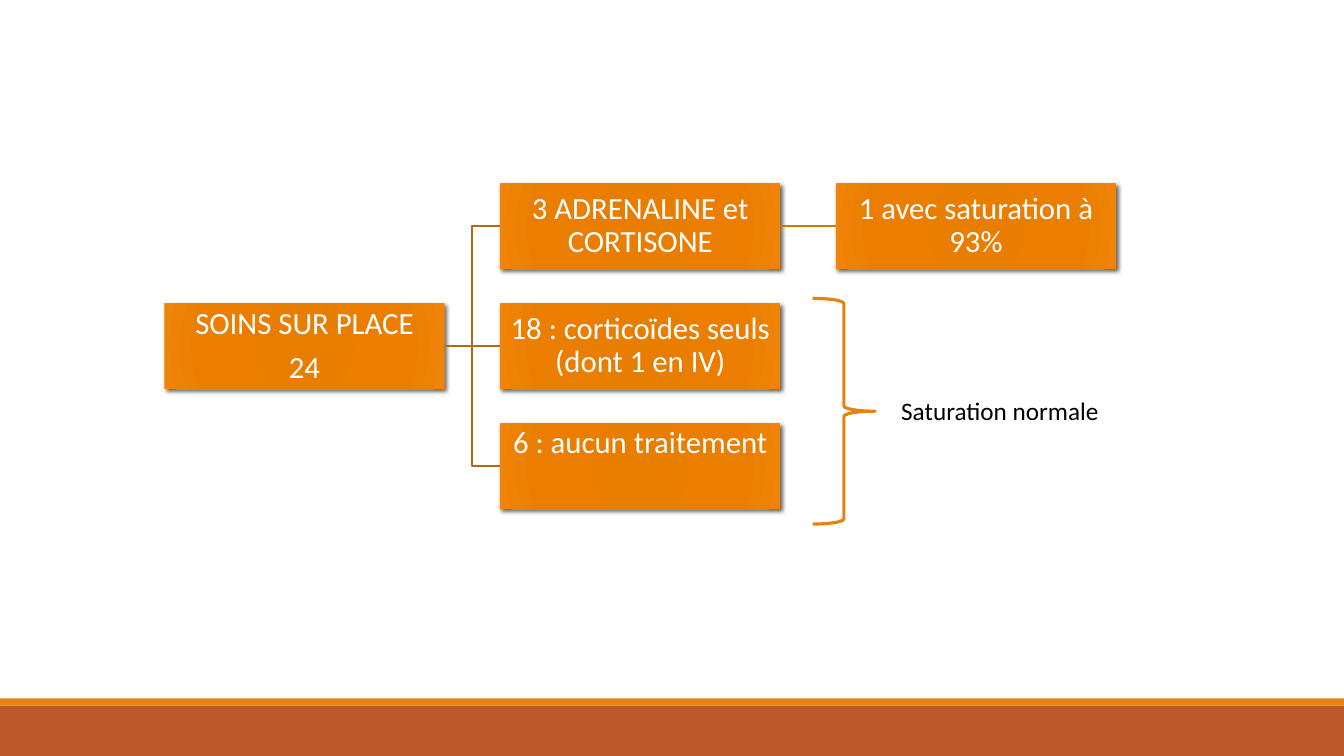
from dataclasses import dataclass

from pptx import Presentation
from pptx import oxml
from pptx.dml.color import RGBColor
from pptx.enum import shapes, text
from pptx.oxml import ns
from pptx.util import Inches, Pt

ORANGE = RGBColor(0xE4, 0x83, 0x12)
RUST = RGBColor(0xBD, 0x58, 0x2C)
BRANCH = RGBColor(0xB7, 0x69, 0x0E)
TWIG = RGBColor(0xCF, 0x77, 0x10)
WHITE = RGBColor(0xFF, 0xFF, 0xFF)
BLACK = RGBColor(0, 0, 0)
FONT = "Calibri"

SLIDE_WIDTH, SLIDE_HEIGHT = 13.33, 7.5
BOX_WIDTH, BOX_HEIGHT = 2.78, 0.85
LEFT, TOP = 1.63, 1.82
COLUMN_STEP, ROW_STEP = 3.33, 1.19
INSET = 0.02

GRADIENT_STOPS = ((0, "E57B00"), (34, "E87D00"), (70, "EB7E00"), (100, "EF8407"))
GRADIENT = (
    f'<a:gradFill {ns.nsdecls("a")} rotWithShape="1"><a:gsLst>'
    + "".join(
        f'<a:gs pos="{stop * 1000}"><a:srgbClr val="{colour}"/></a:gs>'
        for stop, colour in GRADIENT_STOPS
    )
    + '</a:gsLst><a:path path="circle">'
    '<a:fillToRect l="100000" t="100000" r="100000" b="100000"/>'
    "</a:path></a:gradFill>"
)
SHADOW = (
    f'<a:outerShdw {ns.nsdecls("a")} blurRad="{Pt(3)}" dist="{Pt(2)}" '
    'dir="2700000" algn="ctr" rotWithShape="0">'
    '<a:srgbClr val="000000"><a:alpha val="60000"/></a:srgbClr></a:outerShdw>'
)


@dataclass(frozen=True)
class Node:
    key: str
    column: int
    row: int
    lines: tuple[str, ...]
    bottom_inset: float = INSET


@dataclass(frozen=True)
class Link:
    start: str
    end: str
    colour: RGBColor = BRANCH


@dataclass(frozen=True)
class Bar:
    top: float
    height: float
    colour: RGBColor


NODES = (
    Node("care", 0, 1, ("SOINS SUR PLACE", "24")),
    Node("adrenaline", 1, 0, ("3 ADRENALINE et CORTISONE",)),
    Node("saturation", 2, 0, ("1 avec saturation à 93%",)),
    Node("steroids", 1, 1, ("18 : corticoïdes seuls (dont 1 en IV)",)),
    Node("untreated", 1, 2, ("6 : aucun traitement",), bottom_inset=0.46),
)
LINKS = (
    Link("care", "untreated"),
    Link("care", "steroids"),
    Link("adrenaline", "saturation", TWIG),
    Link("care", "adrenaline"),
)
BARS = (Bar(7, 0.5, RUST), Bar(6.93, 0.07, ORANGE))


def add_span(para, words: str, size: float, colour: RGBColor) -> None:
    span = para.add_run()
    span.text = words
    span.font.name = FONT
    span.font.size = Pt(size)
    span.font.color.rgb = colour


def add_bar(page, bar: Bar) -> None:
    band = page.shapes.add_shape(
        shapes.MSO_SHAPE.RECTANGLE,
        0, Inches(bar.top), Inches(SLIDE_WIDTH), Inches(bar.height),
    )
    band.shadow.inherit = False
    band.fill.solid()
    band.fill.fore_color.rgb = bar.colour
    band.line.fill.background()


def style_box(box) -> None:
    """Give the box its radial gradient and soft shadow."""
    box.fill.background()
    box.line.fill.background()
    box.shadow.inherit = False
    properties = box.element.spPr
    properties.replace(properties.find(ns.qn("a:noFill")), oxml.parse_xml(GRADIENT))
    properties.find(ns.qn("a:effectLst")).append(oxml.parse_xml(SHADOW))


def add_node(page, node: Node):
    box = page.shapes.add_shape(
        shapes.MSO_SHAPE.RECTANGLE,
        Inches(LEFT + node.column * COLUMN_STEP),
        Inches(TOP + node.row * ROW_STEP),
        Inches(BOX_WIDTH), Inches(BOX_HEIGHT),
    )
    style_box(box)
    frame = box.text_frame
    frame.word_wrap = True
    frame.vertical_anchor = text.MSO_ANCHOR.MIDDLE
    frame.margin_left = frame.margin_right = frame.margin_top = Inches(INSET)
    frame.margin_bottom = Inches(node.bottom_inset)
    for index, line in enumerate(node.lines):
        para = frame.add_paragraph() if index else frame.paragraphs[0]
        para.alignment = text.PP_ALIGN.CENTER
        para.line_spacing = 0.9
        para.space_after = Pt(7.7)
        add_span(para, line, 22, WHITE)
    return box


def add_link(page, link: Link, boxes: dict) -> None:
    start, end = boxes[link.start], boxes[link.end]
    kind = shapes.MSO_CONNECTOR.STRAIGHT if start.top == end.top else shapes.MSO_CONNECTOR.ELBOW
    connector = page.shapes.add_connector(kind, 0, 0, 0, 0)
    connector.begin_connect(start, 3)
    connector.end_connect(end, 1)
    connector.line.color.rgb = link.colour
    connector.line.width = Pt(1.25)
    connector.element.spPr.append(oxml.parse_xml(f'<a:effectLst {ns.nsdecls("a")}/>'))


def add_brace(page) -> None:
    brace = page.shapes.add_shape(
        shapes.MSO_SHAPE.RIGHT_BRACE,
        Inches(8.06), Inches(2.96), Inches(0.62), Inches(2.24),
    )
    brace.shadow.inherit = False
    brace.fill.background()
    brace.line.color.rgb = ORANGE
    brace.line.width = Pt(2.25)


def add_brace_label(page) -> None:
    label = page.shapes.add_textbox(Inches(8.84), Inches(3.87), Inches(2.9), Inches(0.4))
    label.text_frame.word_wrap = True
    add_span(label.text_frame.paragraphs[0], "Saturation normale", 18, BLACK)


def main() -> None:
    deck = Presentation()
    deck.slide_width, deck.slide_height = Inches(SLIDE_WIDTH), Inches(SLIDE_HEIGHT)
    page = deck.slides.add_slide(deck.slide_layouts.get_by_name("Blank"))
    for bar in BARS:
        add_bar(page, bar)
    boxes = {node.key: add_node(page, node) for node in NODES}
    for link in LINKS:
        add_link(page, link, boxes)
    add_brace(page)
    add_brace_label(page)
    deck.save("out.pptx")


if __name__ == "__main__":
    main()
